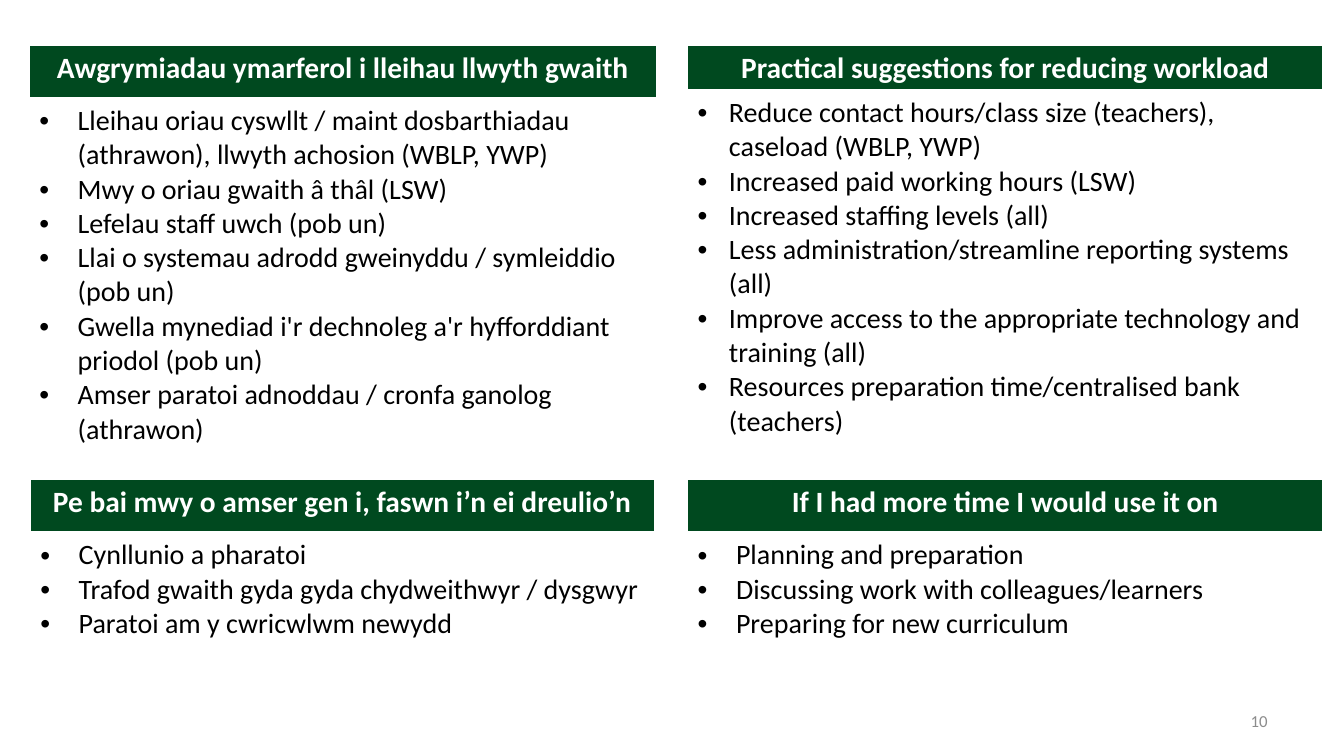
import dataclasses

import pptx
import pptx.dml.color
import pptx.enum.text
import pptx.oxml.ns
import pptx.util
from lxml import etree

PX = 9144  # 100 px to the inch
FONT = "Calibri"
GREEN, WHITE, BLACK, GREY = "00491F", "FFFFFF", "000000", "8C8C8C"
ALIGN = pptx.enum.text.PP_ALIGN


@dataclasses.dataclass
class Panel:
    left: int
    top: int
    width: int
    head: int  # height of the heading row
    body: int  # height of the list row
    indent: int
    title: str
    items: list[str]


PANELS = [
    Panel(682, 476, 630, 53, 166, 38, "If I had more time I would use it on", [
        "Planning and preparation",
        "Discussing work with colleagues/learners",
        "Preparing for new curriculum",
    ]),
    Panel(30, 476, 619, 53, 110, 38, "Pe bai mwy o amser gen i, faswn i’n ei dreulio’n", [
        "Cynllunio a pharatoi",
        "Trafod gwaith gyda gyda chydweithwyr / dysgwyr",
        "Paratoi am y cwricwlwm newydd",
    ]),
    Panel(682, 45, 630, 39, 349, 31, "Practical suggestions for reducing workload", [
        "Reduce contact hours/class size (teachers), caseload (WBLP, YWP)",
        "Increased paid working hours (LSW)",
        "Increased staffing levels (all)",
        "Less administration/streamline reporting systems (all)",
        "Improve access to the appropriate technology and training (all)",
        "Resources preparation time/centralised bank (teachers)",
    ]),
    Panel(29, 45, 622, 53, 343, 38, "Awgrymiadau ymarferol i lleihau llwyth gwaith", [
        "Lleihau oriau cyswllt / maint dosbarthiadau (athrawon), llwyth achosion (WBLP, YWP)",
        "Mwy o oriau gwaith â thâl (LSW)",
        "Lefelau staff uwch (pob un)",
        "Llai o systemau adrodd gweinyddu / symleiddio (pob un)",
        "Gwella mynediad i'r dechnoleg a'r hyfforddiant priodol (pob un)",
        "Amser paratoi adnoddau / cronfa ganolog (athrawon)",
    ]),
]


def emu(px: int) -> pptx.util.Emu:
    return pptx.util.Emu(px * PX)


def rgb(code: str) -> pptx.dml.color.RGBColor:
    return pptx.dml.color.RGBColor.from_string(code)


def add(parent, tag: str, **attrs: str):
    return etree.SubElement(parent, pptx.oxml.ns.qn(tag), attrs)


def style(para, size: int, color: str, bold: bool = False) -> None:
    for run in para.runs:
        run.font.name = FONT
        run.font.size = pptx.util.Pt(size)
        run.font.bold = bold
        run.font.color.rgb = rgb(color)


def bullet(para, indent: int) -> None:
    props = para._p.get_or_add_pPr()
    props.set("marL", str(emu(indent)))
    props.set("indent", str(-emu(indent)))
    add(props, "a:buFont", typeface="Arial")
    add(props, "a:buChar", char="•")


def border(cell, bottom: int) -> None:
    props = cell._tc.get_or_add_tcPr()
    for side, width in zip("LRTB", (1, 1, 1, bottom)):
        line = add(props, f"a:ln{side}", w=str(pptx.util.Pt(width)))
        add(add(line, "a:solidFill"), "a:srgbClr", val=WHITE)


def draw(slide, panel: Panel) -> None:
    frame = slide.shapes.add_table(
        2, 1, emu(panel.left), emu(panel.top),
        emu(panel.width), emu(panel.head + panel.body))
    table = frame.table
    table.horz_banding = False
    table.rows[0].height = emu(panel.head)
    table.rows[1].height = emu(panel.body)

    # Heading row
    head = table.cell(0, 0)
    border(head, 3)
    head.fill.solid()
    head.fill.fore_color.rgb = rgb(GREEN)
    head.text_frame.text = panel.title
    para = head.text_frame.paragraphs[0]
    para.alignment = ALIGN.CENTER
    style(para, 21, WHITE, True)

    # List row
    body = table.cell(1, 0)
    border(body, 1)
    body.fill.background()
    body.text_frame.text = "\n".join(panel.items)
    for para in body.text_frame.paragraphs:
        bullet(para, panel.indent)
        style(para, 20, BLACK)


def number(slide, text: str) -> None:
    box = slide.shapes.add_textbox(emu(956), emu(695), emu(311), emu(40))
    frame = box.text_frame
    frame.word_wrap = True
    frame.vertical_anchor = pptx.enum.text.MSO_ANCHOR.MIDDLE
    frame.text = text
    para = frame.paragraphs[0]
    para.alignment = ALIGN.RIGHT
    style(para, 12, GREY)


def main() -> None:
    deck = pptx.Presentation()
    deck.slide_width, deck.slide_height = emu(1333), emu(750)
    slide = deck.slides.add_slide(deck.slide_layouts[6])
    number(slide, "10")
    for panel in PANELS:
        draw(slide, panel)
    deck.save("out.pptx")


if __name__ == "__main__":
    main()
